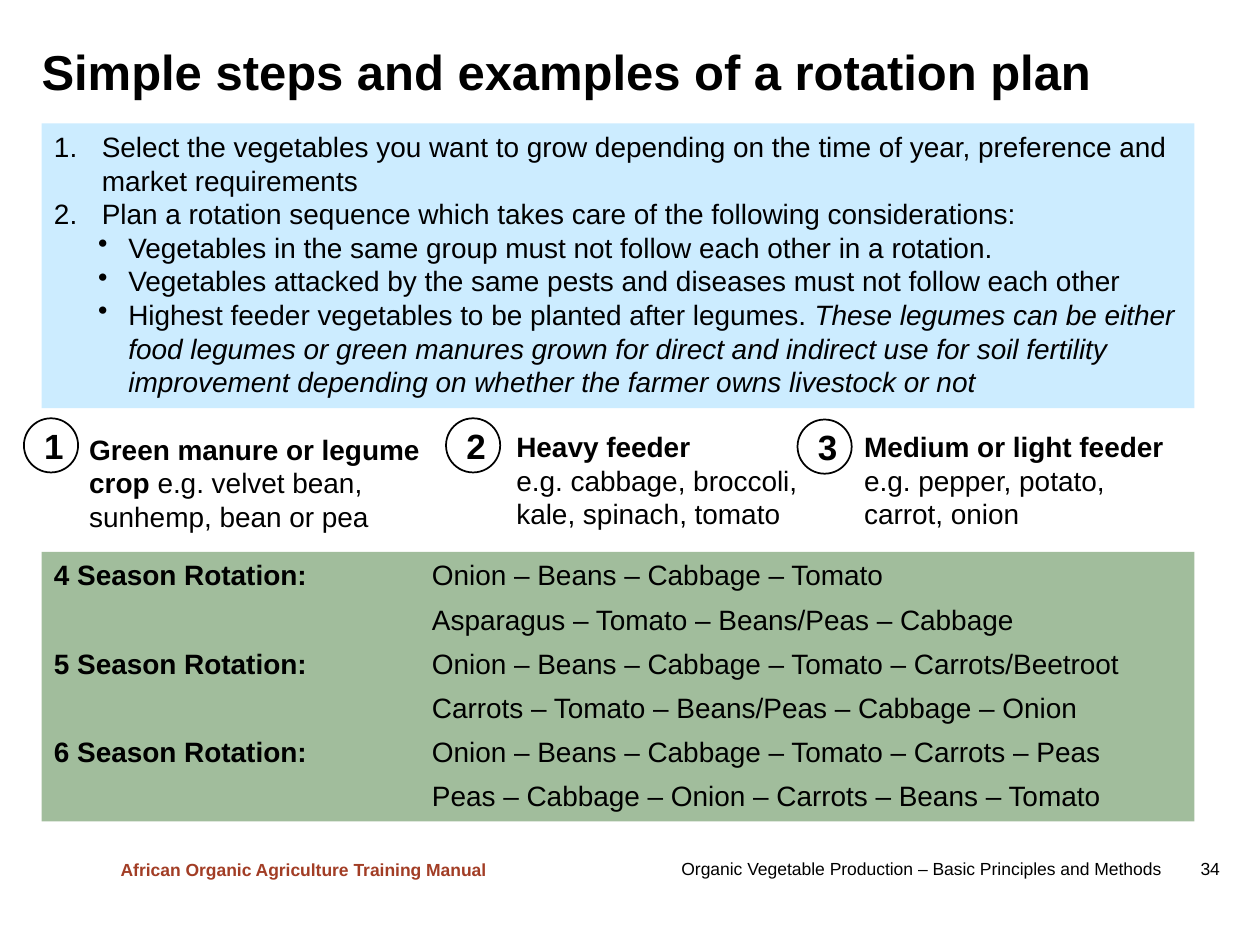
from dataclasses import dataclass

from lxml.etree import SubElement
from pptx import Presentation
from pptx.dml.color import RGBColor
from pptx.enum.shapes import MSO_SHAPE
from pptx.enum.text import MSO_ANCHOR, PP_ALIGN
from pptx.oxml.ns import qn
from pptx.util import Inches, Pt


@dataclass(frozen=True)
class Theme:
    font: str = "Arial"
    black: RGBColor = RGBColor(0x00, 0x00, 0x00)
    white: RGBColor = RGBColor(0xFF, 0xFF, 0xFF)
    blue: RGBColor = RGBColor(0xCC, 0xEC, 0xFF)
    green: RGBColor = RGBColor(0x7A, 0xA1, 0x73)
    rust: RGBColor = RGBColor(0xA2, 0x3D, 0x25)
    title: Pt = Pt(28)
    number: Pt = Pt(20)
    body: Pt = Pt(16)
    footer: Pt = Pt(10)


theme = Theme()
presentation = Presentation()
presentation.slide_width = Inches(10)
presentation.slide_height = Inches(7.5)
slide = presentation.slides.add_slide(presentation.slide_layouts[6])


def add_box(left, top, width, height, preset=None, fill=None):
    area = [Inches(length) for length in (left, top, width, height)]
    if preset is None:
        shape = slide.shapes.add_textbox(*area)
    else:
        shape = slide.shapes.add_shape(preset, *area)
        shape.shadow.inherit = False
        shape.fill.solid()
        shape.fill.fore_color.rgb = fill
        shape.line.fill.background()
    shape.text_frame.word_wrap = True
    return shape


def write(shape, paragraphs, size, color=theme.black, bold=None, align=PP_ALIGN.LEFT, tab=None, bullets=()):
    frame = shape.text_frame
    for index, runs in enumerate(paragraphs):
        paragraph = frame.add_paragraph() if index else frame.paragraphs[0]
        paragraph.alignment = align
        properties = paragraph._p.get_or_add_pPr()
        if bullets:
            level, margin, indent, tag, attributes = bullets[index]
            paragraph.level = level
            properties.set("marL", str(Inches(margin)))
            properties.set("indent", str(Inches(indent)))
            SubElement(properties, qn(tag), attributes)
        if tab:
            tabs = SubElement(properties, qn("a:tabLst"))
            SubElement(tabs, qn("a:tab"), pos=str(Inches(tab)), algn="l")
        paragraph.font.name = theme.font
        paragraph.font.size = size
        paragraph.font.color.rgb = color
        paragraph.font.bold = bold
        for text, style in runs:
            run = paragraph.add_run()
            run.text = text
            if style == "bold":
                run.font.bold = True
            elif style == "italic":
                run.font.italic = True


title = add_box(0.33, 0.26, 9.41, 0.6)
title.text_frame.vertical_anchor = MSO_ANCHOR.MIDDLE
title.text_frame.margin_left = title.text_frame.margin_top = title.text_frame.margin_bottom = 0
write(title, [[("Simple steps and examples of a rotation plan", None)]], theme.title, bold=True)

steps = [
    [("Select the vegetables you want to grow depending on the time of year, preference and market requirements", None)],
    [("Plan a rotation sequence which takes care of the following considerations:", None)],
    [("Vegetables in the same group must not follow each other in a rotation.", None)],
    [("Vegetables attacked by the same pests and diseases must not follow each other", None)],
    [
        ("Highest feeder vegetables to be planted after legumes. ", None),
        ("These legumes can be either food legumes or green manures grown for direct and indirect use "
         "for soil fertility improvement depending on whether the farmer owns livestock or not", "italic"),
    ],
]
numbered = (0, 0.38, -0.38, "a:buAutoNum", {"type": "arabicPeriod"})
dotted = (1, 0.59, -0.24, "a:buChar", {"char": "•"})
steps_panel = add_box(0.33, 0.98, 9.15, 2.26, MSO_SHAPE.RECTANGLE, theme.blue)
steps_panel.text_frame.vertical_anchor = MSO_ANCHOR.TOP
write(steps_panel, steps, theme.body, bullets=[numbered] * 2 + [dotted] * 3)

rotations = {
    4: ["Onion – Beans – Cabbage – Tomato", "Asparagus – Tomato – Beans/Peas – Cabbage"],
    5: ["Onion – Beans – Cabbage – Tomato – Carrots/Beetroot", "Carrots – Tomato – Beans/Peas – Cabbage – Onion"],
    6: ["Onion – Beans – Cabbage – Tomato – Carrots – Peas", "Peas – Cabbage – Onion – Carrots – Beans – Tomato"],
}
rotation_lines = []
for seasons, (first, second) in rotations.items():
    rotation_lines.append([(f"{seasons} Season Rotation:", "bold"), (f"\t{first}", None)])
    rotation_lines.append([(f"\t{second}", None)])
rotation_panel = add_box(0.33, 4.38, 9.15, 2.14, MSO_SHAPE.RECTANGLE, theme.green)
fill_color = rotation_panel.fill._xPr.find(qn("a:solidFill"))[0]
SubElement(fill_color, qn("a:alpha"), val="70000")
rotation_panel.text_frame.vertical_anchor = MSO_ANCHOR.TOP
write(rotation_panel, rotation_lines, theme.body, tab=3)
for paragraph in rotation_panel.text_frame.paragraphs:
    paragraph.space_after = Pt(6)

feeders = [
    (0.19, 3.32, 0.61, 3.38, 2.9,
     [[("Green manure or legume crop ", "bold"), ("e.g. velvet bean, sunhemp, bean or pea", None)]]),
    (3.54, 3.32, 4, 3.36, 2.44,
     [[("Heavy feeder", "bold")], [("e.g. cabbage, broccoli,", None)], [("kale, spinach, tomato", None)]]),
    (6.33, 3.33, 6.76, 3.36, 3.07,
     [[("Medium or light feeder", "bold")], [("e.g. pepper, potato,", None)], [("carrot, onion", None)]]),
]
for number, (circle_left, circle_top, left, top, width, lines) in enumerate(feeders, 1):
    write(add_box(left, top, width, 0.91), lines, theme.body)
    circle = add_box(circle_left, circle_top, 0.43, 0.43, MSO_SHAPE.OVAL, theme.white)
    circle.line.color.rgb = theme.black
    circle.line.width = Pt(1)
    circle.text_frame.vertical_anchor = MSO_ANCHOR.MIDDLE
    write(circle, [[(str(number), None)]], theme.number, bold=True, align=PP_ALIGN.CENTER)

manual = add_box(0.86, 6.77, 3.14, 0.27)
manual.text_frame.word_wrap = False
write(manual, [[("African Organic Agriculture Training Manual", None)]], theme.footer, theme.rust, bold=True)

chapter = add_box(5.31, 6.76, 4.6, 0.27)
chapter.text_frame.vertical_anchor = MSO_ANCHOR.MIDDLE
write(chapter, [[("Organic Vegetable Production – Basic Principles and Methods\t34", None)]], theme.footer, tab=4.12)

presentation.save("out.pptx")
